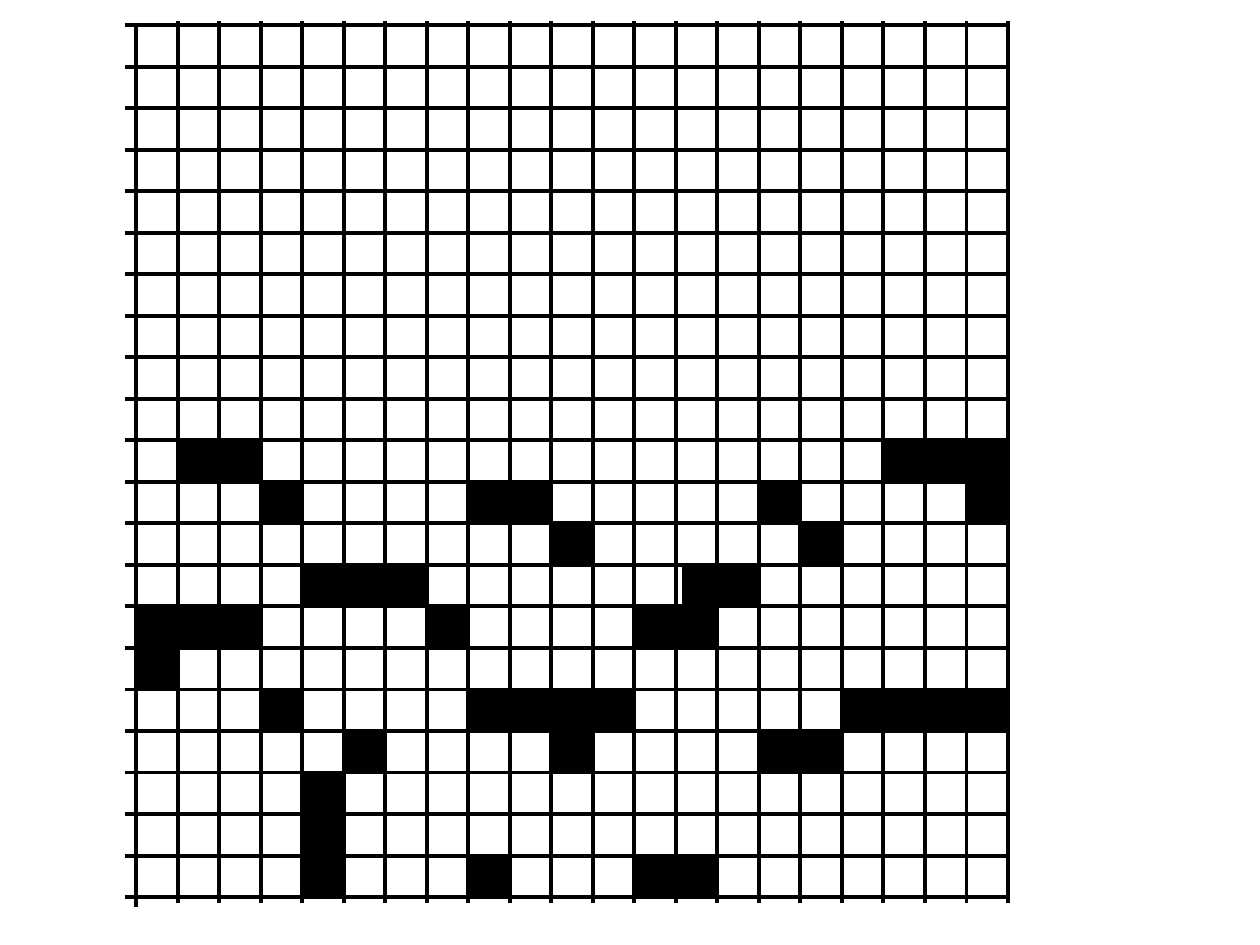
from pptx import Presentation
from pptx.dml.color import RGBColor
from pptx.enum.shapes import MSO_CONNECTOR, MSO_SHAPE
from pptx.oxml.ns import qn
from pptx.util import Inches, Pt
from lxml import etree

STRAIGHT = MSO_CONNECTOR.STRAIGHT
RECTANGLE = MSO_SHAPE.RECTANGLE
BLACK = RGBColor(0x00, 0x00, 0x00)

BLANK_LAYOUT = 6
CELLS = 21
GRID_LEFT, GRID_TOP = 1.08, 0.2
PITCH = 6.92 / CELLS

# column, row, columns wide, rows high
BLOCKS = [
    (12, 20, 2, 1),
    (8, 20, 1, 1),
    (4, 18, 1, 3),
    (17, 16, 4, 1),
    (15, 17, 2, 1),
    (8, 16, 4, 1),
    (10, 17, 1, 1),
    (5, 17, 1, 1),
    (3, 16, 1, 1),
    (0, 14, 1, 2),
    (1, 14, 2, 1),
    (4, 13, 3, 1),
    (7, 14, 1, 1),
    (12, 14, 2, 1),
    (13.15, 13, 1.85, 1),
    (10, 12, 1, 1),
    (8, 11, 2, 1),
    (16, 12, 1, 1),
    (15, 11, 1, 1),
    (3, 11, 1, 1),
    (1, 10, 2, 1),
    (18, 10, 3, 1),
    (20, 11, 1, 1),
]


class GridSlide:
    line_width = Pt(2.25)
    inset = 0.04

    def __init__(self, slide):
        self.slide = slide

    def x(self, column):
        return Inches(GRID_LEFT + column * PITCH)

    def y(self, row):
        return Inches(GRID_TOP + row * PITCH)

    def outline(self, element):
        element.line.color.rgb = BLACK
        element.line.width = self.line_width

    def rule(self, start, end):
        rule = self.slide.shapes.add_connector(
            STRAIGHT,
            self.x(start[0]), self.y(start[1]),
            self.x(end[0]), self.y(end[1]),
        )
        self.outline(rule)
        etree.SubElement(rule._element.spPr, qn("a:effectLst"))

    def block(self, column, row, columns, rows):
        block = self.slide.shapes.add_shape(
            RECTANGLE,
            self.x(column + self.inset),
            self.y(row + self.inset),
            Inches((columns - 2 * self.inset) * PITCH),
            Inches((rows - 2 * self.inset) * PITCH),
        )
        block.shadow.inherit = False
        block.fill.solid()
        block.fill.fore_color.rgb = BLACK
        self.outline(block)


def main():
    deck = Presentation()
    deck.slide_width, deck.slide_height = Inches(10), Inches(7.5)
    grid = GridSlide(deck.slides.add_slide(deck.slide_layouts[BLANK_LAYOUT]))

    for row in range(CELLS, -1, -1):
        grid.rule((-0.27, row), (CELLS - 0.03, row))
    for column in range(CELLS, 0, -1):
        grid.rule((column, CELLS + 0.15), (column, -0.09))
    grid.rule((0, CELLS + 0.24), (0, 0))

    for cells in BLOCKS:
        grid.block(*cells)

    deck.save("out.pptx")


if __name__ == "__main__":
    main()
